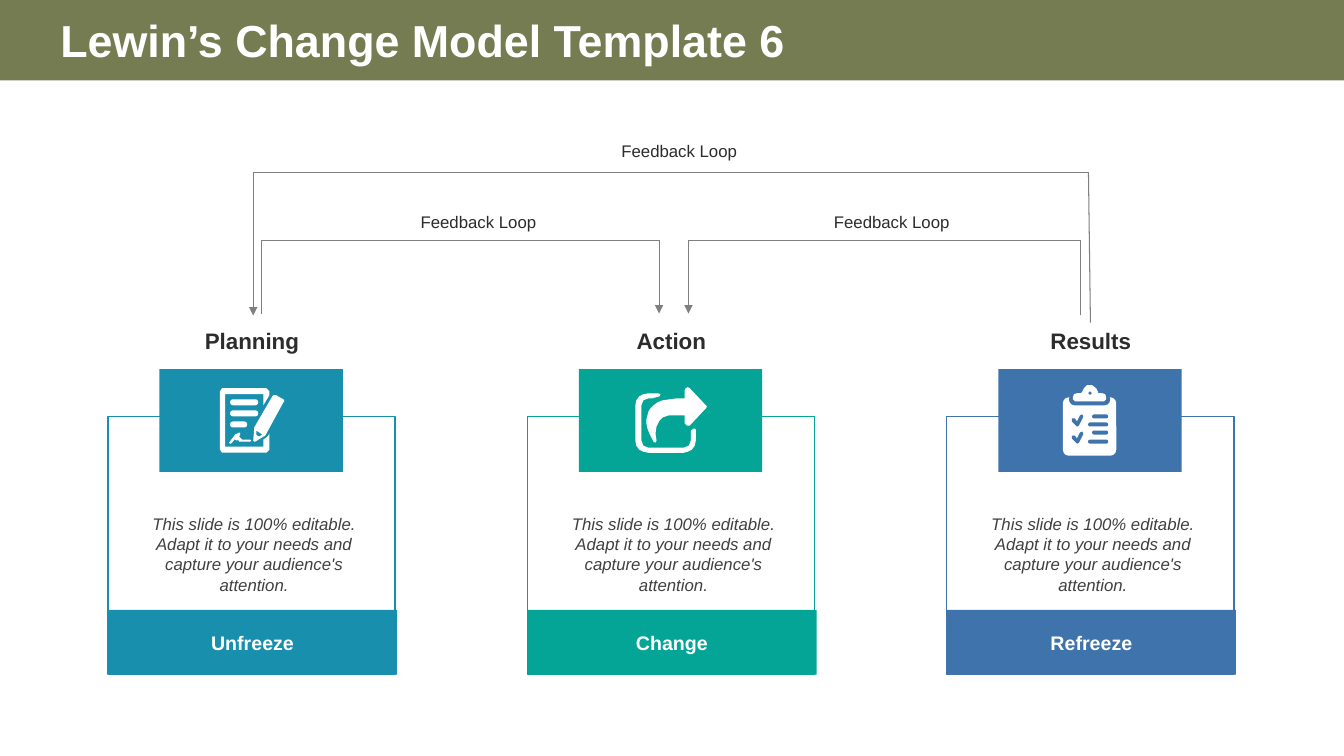
from pptx import Presentation
from pptx.dml.color import RGBColor
from pptx.enum.shapes import MSO_CONNECTOR, MSO_SHAPE as SHAPE
from pptx.enum.text import MSO_ANCHOR as ANCHOR, MSO_AUTO_SIZE as AUTO, PP_ALIGN as ALIGN
from pptx.oxml import parse_xml
from pptx.oxml.ns import nsdecls
from pptx.util import Cm, Pt

THEME = {
    "colors": {"band": "767C52", "white": "FFFFFF", "dark": "2C2C2C", "grey": "404040",
               "arrow": "7F7F7F", "blue": "1890AD", "green": "04A597", "navy": "3E74AB"},
    "text": {
        "title": ("white", {"size": Pt(32), "bold": True}),
        "heading": ("dark", {"size": Pt(16), "bold": True}),
        "body": ("grey", {"size": Pt(12), "italic": True}),
        "stage": ("white", {"size": Pt(14), "bold": True}),
        "loop": ("dark", {"size": Pt(12), "bold": False}),
    },
    "font": "Arial",
}


def paint(sp, fill=None, line=None):
    sp.shadow.inherit = False
    if fill:
        sp.fill.solid()
        sp.fill.fore_color.rgb = RGBColor.from_string(THEME["colors"][fill])
    else:
        sp.fill.background()
    if line:
        sp.line.color.rgb = RGBColor.from_string(THEME["colors"][line])
        sp.line.width = Pt(1)
    else:
        sp.line.fill.background()
    return sp


def write(sp, text, style, align=ALIGN.CENTER, anchor=ANCHOR.MIDDLE, inset=(0.18, 0.1)):
    tf = sp.text_frame
    side, edge = Cm(inset[0]), Cm(inset[1])
    frame = {"word_wrap": True, "auto_size": AUTO.NONE, "vertical_anchor": anchor,
             "margin_left": side, "margin_right": side, "margin_top": edge, "margin_bottom": edge}
    for key, value in frame.items():
        setattr(tf, key, value)
    p = tf.paragraphs[0]
    p.alignment = align
    r = p.add_run()
    r.text = text
    color, formats = THEME["text"][style]
    for key, value in {"name": THEME["font"], **formats}.items():
        setattr(r.font, key, value)
    r.font.color.rgb = RGBColor.from_string(THEME["colors"][color])


prs = Presentation()
prs.slide_width, prs.slide_height = Cm(33.87), Cm(19.05)
s = prs.slides.add_slide(prs.slide_layouts[5])
shapes = s.shapes

title = shapes.title
for key, value in {"left": Cm(1.27), "top": Cm(0), "width": Cm(27.86), "height": Cm(1.98)}.items():
    setattr(title, key, value)
write(title, "Lewin’s Change Model Template 6", "title", ALIGN.LEFT, inset=(0.25, 0.13))
band = paint(shapes.add_shape(SHAPE.RECTANGLE, 0, 0, prs.slide_width, Cm(2.03)), "band")
title.element.addprevious(band.element)

paper = [(106, 68), (103, 70), (103, 77), (65, 77), (65, 25), (103, 25), (103, 36), (109, 26),
         (109, 22), (106, 19), (62, 19), (60, 22), (60, 80), (62, 83), (106, 83), (109, 80),
         (109, 64), (108, 66)]
pencil = [(124, 32), (123, 30), (119, 28), (116, 26), (113, 26), (112, 27), (94, 58), (93, 71),
          (94, 72), (95, 72), (105, 66), (123, 33)]
pencil_tip = [(99, 67), (97, 66), (96, 65), (96, 61), (99, 63), (102, 65)]
signature = [(80, 72), (82, 72), (90, 72), (91, 71), (90, 70), (82, 70), (81, 69), (80, 68),
             (79, 67), (80, 65), (80, 63), (79, 63), (75, 65), (69, 73), (70, 74), (71, 74),
             (77, 67), (75, 70), (77, 71), (78, 70), (79, 72)]
share_arrow = [(126, 36), (110, 19), (108, 18), (106, 19), (105, 21), (105, 29), (98, 29), (90, 30),
               (83, 31), (78, 33), (74, 36), (71, 39), (69, 42), (68, 46), (67, 50), (67, 54),
               (68, 59), (70, 64), (72, 68), (74, 72), (76, 73), (77, 71), (76, 64), (77, 57),
               (80, 51), (83, 48), (89, 46), (98, 46), (105, 46), (105, 54), (107, 56), (110, 56),
               (126, 39), (127, 37)]
share_box = [(115, 59), (114, 59), (111, 61), (111, 71), (109, 76), (104, 78), (69, 78), (64, 76),
             (62, 71), (62, 36), (64, 31), (69, 29), (73, 29), (80, 27), (81, 25), (79, 24),
             (69, 24), (64, 25), (60, 27), (57, 31), (56, 36), (56, 71), (57, 76), (60, 80),
             (64, 82), (69, 83), (104, 83), (108, 82), (112, 80), (115, 76), (116, 71), (116, 60)]
clip = [(103, 24), (99, 24), (99, 23), (97, 19), (93, 16), (91, 16), (88, 16), (85, 19), (83, 23),
        (82, 24), (78, 24), (75, 25), (74, 28), (74, 30), (76, 32), (105, 32), (107, 30),
        (107, 28), (106, 25)]
clip_hole = [(91, 22), (89, 24), (91, 26), (93, 24)]
tick = [(84, 48), (80, 56), (78, 57), (77, 56), (73, 52), (73, 49), (76, 49), (78, 52),
        (81, 46), (83, 45), (84, 46)]
lower_tick = [(x, y + 17) for x, y in tick]

cards = [
    ("Planning", "Unfreeze", "blue",
     [("white", 70, y, w, 6) for y, w in ((30, 28), (41, 28), (52, 17))],
     [("white", [paper]), ("white", [pencil, pencil_tip]), ("white", [signature])]),
    ("Action", "Change", "green", [],
     [("white", [share_arrow]), ("white", [share_box])]),
    ("Results", "Refreeze", "navy",
     [("white", 64, 28, 53, 58), ("navy", 70, 24, 41, 12)]
     + [("navy", x, y, 109 - x, 4) for x, y in ((93, 45), (89, 53), (93, 61), (89, 70))],
     [("white", [clip, clip_hole]), ("navy", [tick]), ("navy", [lower_tick])]),
]
card_left, card_pitch, tile_top = 2.72, 10.57, 9.3
unit = Cm(2.54) // 100

for i, (heading, stage, color, bars, outlines) in enumerate(cards):
    left = card_left + i * card_pitch
    write(shapes.add_textbox(Cm(left + 2.08), Cm(8.13), Cm(3.1), Cm(0.91)), heading, "heading")
    paint(shapes.add_shape(SHAPE.RECTANGLE, Cm(left), Cm(10.49), Cm(7.24), Cm(6.5)), line=color)
    write(shapes.add_textbox(Cm(left + 0.56), Cm(12.85), Cm(6.25), Cm(2.13)),
          "This slide is 100% editable. Adapt it to your needs and capture your audience's attention.",
          "body", anchor=ANCHOR.TOP)
    bar = paint(shapes.add_shape(SHAPE.RECTANGLE, Cm(left), Cm(15.37), Cm(7.29), Cm(1.63)), color)
    write(bar, stage, "stage")
    x0, y0 = Cm(left + 1.3), Cm(tile_top)
    paint(shapes.add_shape(SHAPE.RECTANGLE, x0, y0, Cm(4.62), Cm(2.59)), color)
    for tone, x, y, w, h in bars:
        sp = shapes.add_shape(SHAPE.ROUNDED_RECTANGLE, x0 + x * unit, y0 + y * unit, w * unit, h * unit)
        sp.adjustments[0] = min(0.5, 6 / min(w, h))
        paint(sp, tone)
    for tone, contours in outlines:
        builder = shapes.build_freeform(*contours[0][0], scale=unit)
        builder.add_line_segments(contours[0][1:], close=True)
        for contour in contours[1:]:
            builder.move_to(*contour[0])
            builder.add_line_segments(contour[1:], close=True)
        paint(builder.convert_to_shape(x0, y0), tone)

for x, y, w in ((15.37, 3.45, 3.5), (10.31, 5.23, 3.5), (20.57, 5.23, 3.81)):
    write(shapes.add_textbox(Cm(x), Cm(y), Cm(w), Cm(0.71)), "Feedback Loop", "loop")

loops = [
    ((27.48, 8.13), (27.43, 4.34), (6.38, 4.34), (6.38, 7.95)),
    ((27.23, 7.95), (27.23, 6.05), (17.35, 6.05), (17.35, 7.9)),
    ((6.58, 7.9), (6.58, 6.05), (16.61, 6.05), (16.61, 7.9)),
]
for corners in loops:
    for start, end in zip(corners, corners[1:]):
        line = shapes.add_connector(MSO_CONNECTOR.STRAIGHT, *map(Cm, start + end))
        line.line.color.rgb = RGBColor.from_string(THEME["colors"]["arrow"])
        line.line.width = Pt(0.75)
        if end == corners[-1]:
            line.line.fill.solid()
            line.line.color.rgb = RGBColor.from_string(THEME["colors"]["arrow"])
            ln = line.element.spPr.find("{http://schemas.openxmlformats.org/drawingml/2006/main}ln")
            ln.append(parse_xml(f'<a:tailEnd {nsdecls("a")} type="triangle"/>'))
        line.element.spPr.append(parse_xml(f'<a:effectLst {nsdecls("a")}/>'))

prs.save("out.pptx")
